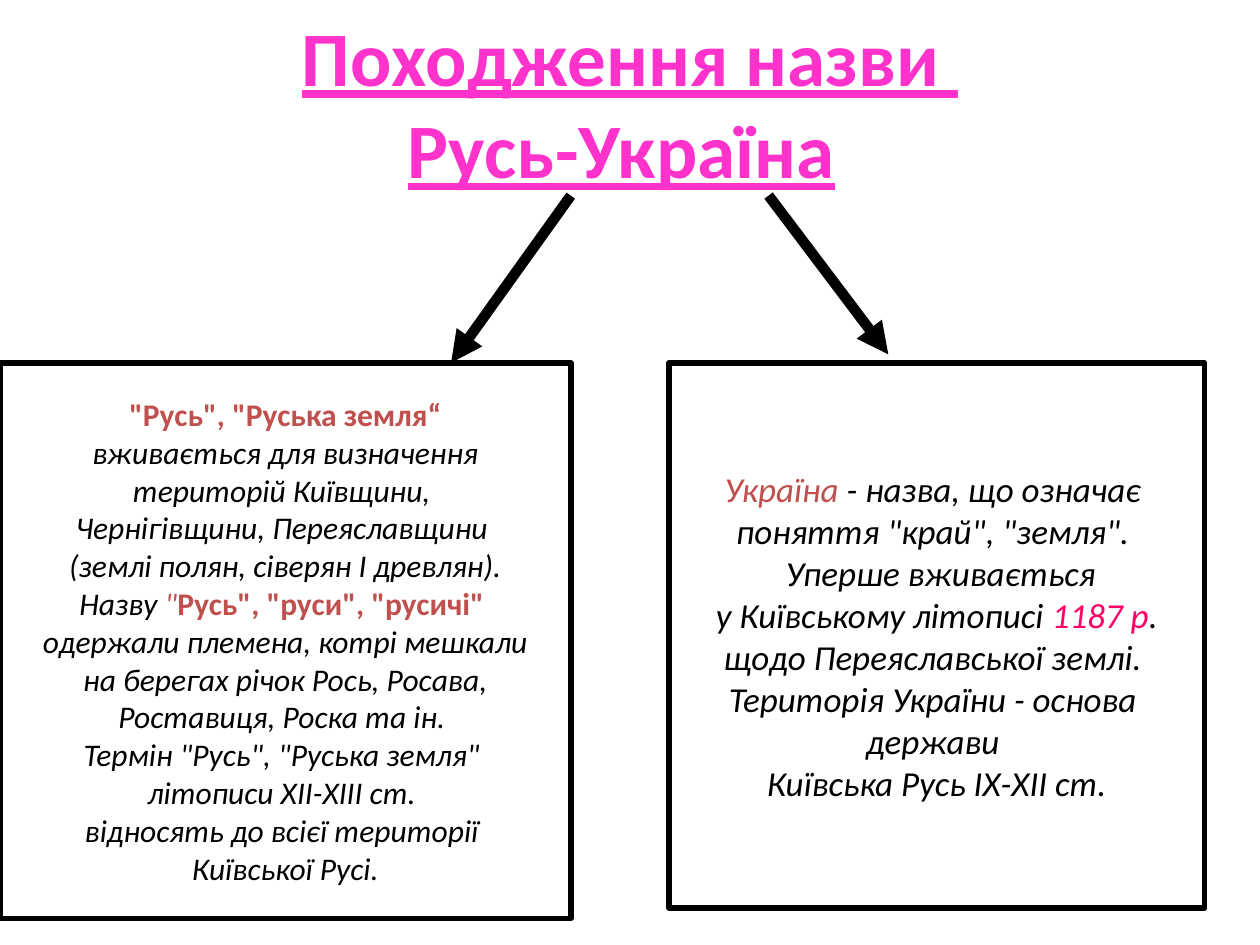
import pptx
import pptx.dml.color
import pptx.enum.shapes
import pptx.enum.text
import pptx.oxml
import pptx.oxml.ns
import pptx.util

WIDTH, HEIGHT = pptx.util.Inches(10), pptx.util.Inches(7.5)
COLORS = {"title": "FF33CC", "text": "000000", "box": "FFFFFF",
          "term": "C0504D", "date": "FF0066"}
FORMATS = {
    "title": {"bold": True, "underline": True, "color": "title"},
    "space": {"bold": False, "underline": False, "color": "text"},
    "plain": {"italic": True, "color": "text"},
    "term": {"italic": True, "color": "term"},
    "strong": {"bold": True, "color": "term"},
    "date": {"italic": True, "color": "date"},
}
TITLE_LINES = [[("Походження назви ", "title")],
               [("Русь-Україна", "title"), (" ", "space")]]
RUS_LINES = [
    [("\"Русь\", \"Руська земля“", "strong")],
    " вживається для визначення ",
    "територій Київщини, ",
    "Чернігівщини, Переяславщини ",
    "(землі полян, сіверян І древлян).",
    [("Назву ", "plain"), ("\"", "term"), ("Русь\", \"руси\", \"русичі\" ", "strong")],
    "одержали племена, котрі мешкали",
    " на берегах річок Рось, Росава, ",
    "Роставиця, Роска та ін. ",
    "Термін \"Русь\", \"Руська земля\" ",
    "літописи ХІІ-ХІІІ ст. ",
    "відносять до всієї території ",
    "Київської Русі.",
]
UKRAINE_LINES = [
    [("Україна ", "term"), ("- назва, що означає ", "plain")],
    "поняття \"край\", \"земля\". ",
    " Уперше вживається",
    [(" у Київському літописі ", "plain"), ("1187 р", "date"), (". ", "plain")],
    "щодо Переяславської землі. ",
    "Територія України - основа ",
    "держави ",
    "Київська Русь ІХ-ХІІ ст.",
]


def scale(shares):
    """Turn shares of the slide's size into lengths, across then down."""
    return [round(share * (HEIGHT if index % 2 else WIDTH))
            for index, share in enumerate(shares)]


def color(name):
    """Return the named colour."""
    return pptx.dml.color.RGBColor.from_string(COLORS[name])


def add_runs(paragraph, runs, size):
    """Add formatted runs to a paragraph."""
    for text, style in runs:
        run = paragraph.add_run()
        run.text = text
        values = {"name": "Calibri", "size": pptx.util.Pt(size),
                  "bold": False, "italic": False, **FORMATS[style]}
        run.font.color.rgb = color(values.pop("color"))
        for attribute, value in values.items():
            setattr(run.font, attribute, value)


def place(shape, box):
    """Fit a shape to a box given in shares of the slide."""
    for attribute, value in zip(("left", "top", "width", "height"), scale(box)):
        setattr(shape, attribute, value)


def format_frame(frame, wrap):
    """Centre a text frame vertically and set its wrapping."""
    values = {"word_wrap": wrap, "auto_size": pptx.enum.text.MSO_AUTO_SIZE.NONE,
              "vertical_anchor": pptx.enum.text.MSO_ANCHOR.MIDDLE}
    for attribute, value in values.items():
        setattr(frame, attribute, value)


def fill_title(slide, box):
    """Fill the title placeholder with two lines."""
    title = slide.shapes.title
    place(title, box)
    format_frame(title.text_frame, True)
    paragraph = title.text_frame.paragraphs[0]
    paragraph.alignment = pptx.enum.text.PP_ALIGN.CENTER
    for index, runs in enumerate(TITLE_LINES):
        if index:
            paragraph.add_line_break()
        add_runs(paragraph, runs, 44)


def add_definition(slide, box, lines, size):
    """Add a framed box with one centred paragraph for each line."""
    shape = slide.shapes.add_shape(
        pptx.enum.shapes.MSO_SHAPE.RECTANGLE, *scale(box))
    shape.shadow.inherit = False
    shape.fill.solid()
    shape.fill.fore_color.rgb = color("box")
    shape.line.color.rgb = color("text")
    shape.line.width = pptx.util.Pt(3.25)
    frame = shape.text_frame
    format_frame(frame, False)
    for index, line in enumerate(lines):
        paragraph = frame.add_paragraph() if index else frame.paragraphs[0]
        paragraph.alignment = pptx.enum.text.PP_ALIGN.CENTER
        runs = [(line, "plain")] if isinstance(line, str) else line
        add_runs(paragraph, runs, size)


def add_arrow(slide, ends):
    """Add a thick arrow between two points."""
    arrow = slide.shapes.add_connector(
        pptx.enum.shapes.MSO_CONNECTOR.STRAIGHT, *scale(ends))
    arrow.line.color.rgb = color("text")
    arrow.line.width = pptx.util.Pt(6)
    line = arrow.line._get_or_add_ln()
    head = pptx.oxml.parse_xml(
        f'<a:tailEnd {pptx.oxml.ns.nsdecls("a")} type="triangle"/>')
    line.append(head)
    effects = pptx.oxml.parse_xml(f'<a:effectLst {pptx.oxml.ns.nsdecls("a")}/>')
    line.addnext(effects)


def main():
    """Build and save the slide."""
    presentation = pptx.Presentation()
    presentation.slide_width, presentation.slide_height = WIDTH, HEIGHT
    slide = presentation.slides.add_slide(presentation.slide_layouts[0])
    subtitle = slide.placeholders[1].element
    subtitle.getparent().remove(subtitle)
    fill_title(slide, (0.075, 0, 0.85, 0.215))
    add_definition(slide, (0, 0.384, 0.453, 0.588), RUS_LINES, 18)
    add_definition(slide, (0.531, 0.384, 0.425, 0.577), UKRAINE_LINES, 20)
    add_arrow(slide, (0.453, 0.207, 0.358, 0.384))
    add_arrow(slide, (0.61, 0.207, 0.705, 0.375))
    presentation.save("out.pptx")


if __name__ == "__main__":
    main()
